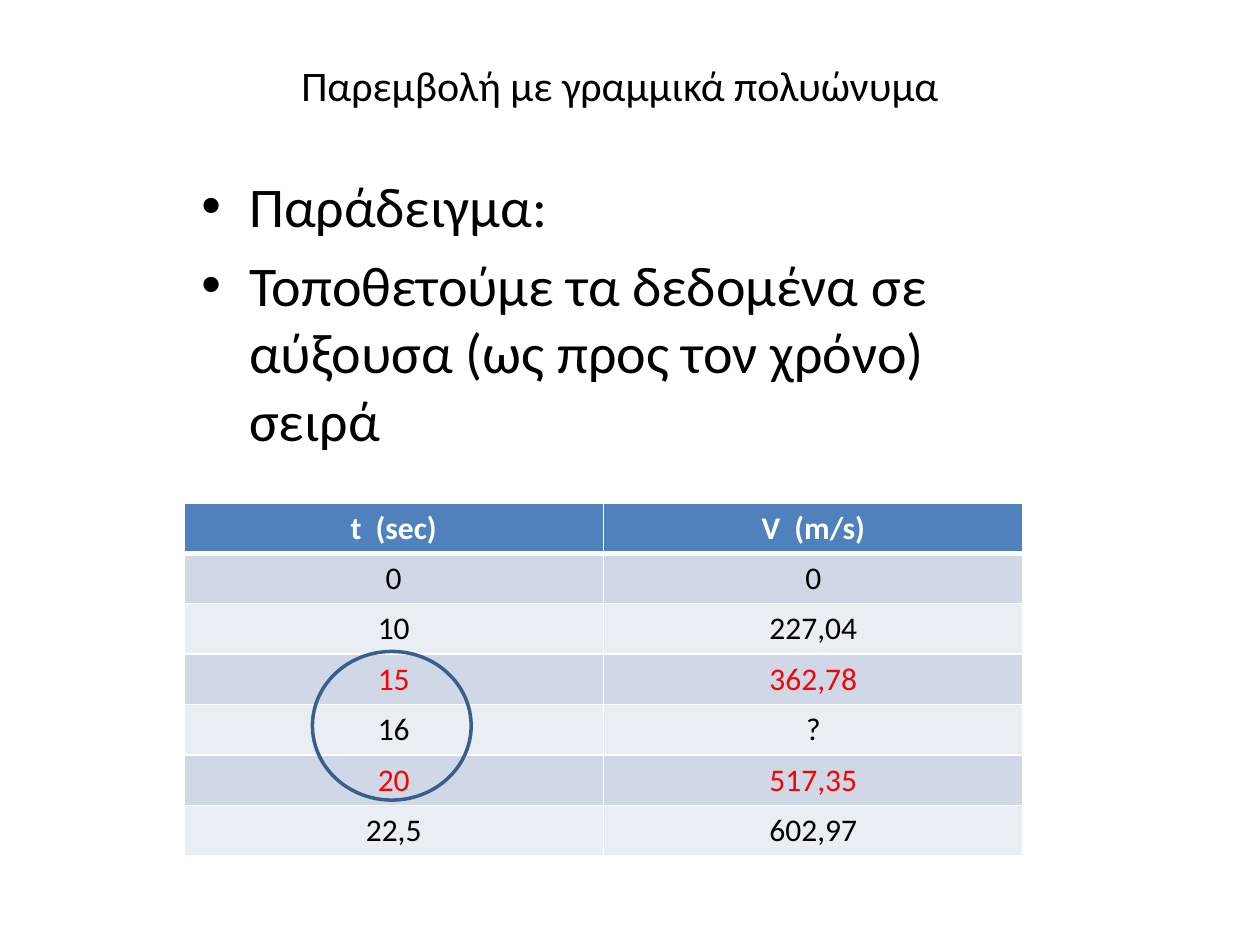
from lxml import etree
from pptx import Presentation
from pptx.dml.color import RGBColor
from pptx.enum.shapes import MSO_SHAPE
from pptx.enum.text import MSO_ANCHOR, PP_ALIGN
from pptx.oxml.ns import qn
from pptx.util import Inches, Pt

ELLIPSE = MSO_SHAPE.OVAL
CENTER, LEFT = PP_ALIGN.CENTER, PP_ALIGN.LEFT
MIDDLE = MSO_ANCHOR.MIDDLE

BLACK = RGBColor(0x00, 0x00, 0x00)
WHITE = RGBColor(0xFF, 0xFF, 0xFF)
RED = RGBColor(0xFF, 0x00, 0x00)
HEADER_BLUE = RGBColor(0x4F, 0x81, 0xBD)
BANDS = (RGBColor(0xD0, 0xD8, 0xE8), RGBColor(0xE9, 0xED, 0xF4))
RING_BLUE = RGBColor(0x3A, 0x5F, 0x8C)

FONT = "Calibri"
TITLE_ONLY = 5
TABLE_LEFT, TABLE_TOP = 1.46, 3.99
COLUMN_WIDTH, ROW_HEIGHT = 3.33, 0.4
TITLE = "Παρεμβολή με γραμμικά πολυώνυμα"
POINTS = (
    "Παράδειγμα:",
    "Τοποθετούμε τα δεδομένα σε αύξουσα (ως προς τον χρόνο) σειρά",
)
MEASUREMENTS = (
    ("t  (sec)", "V  (m/s)"),
    ("0", "0"),
    ("10", "227,04"),
    ("15", "362,78"),
    ("16", "?"),
    ("20", "517,35"),
    ("22,5", "602,97"),
)
NEIGHBOUR_TIMES = ("15", "20")


def write(paragraph, text, size, color=BLACK, bold=False, align=LEFT):
    """Write formatted text into a paragraph."""
    paragraph.alignment = align
    run = paragraph.add_run()
    run.text = text
    run.font.name = FONT
    run.font.size = Pt(size)
    run.font.bold = bold
    run.font.color.rgb = color


def add_bullet(paragraph, indent):
    """Give a paragraph a round bullet and a hanging indent."""
    properties = paragraph._p.get_or_add_pPr()
    properties.set("marL", str(Inches(indent)))
    properties.set("indent", str(-Inches(indent)))
    etree.SubElement(properties, qn("a:buFont"), typeface="Arial")
    etree.SubElement(properties, qn("a:buChar"), char="•")


def set_title(slide):
    """Place and fill the title placeholder."""
    title = slide.shapes.title
    title.left, title.top = Inches(0.67), Inches(0.36)
    title.width, title.height = Inches(8.5), Inches(0.63)
    title.text_frame.vertical_anchor = MIDDLE
    write(title.text_frame.paragraphs[0], TITLE, 24, align=CENTER)


def add_points(slide):
    """Add the bulleted explanation."""
    box = slide.shapes.add_textbox(Inches(1.5), Inches(1.31), Inches(7), Inches(2.44))
    frame = box.text_frame
    frame.word_wrap = True
    for index, point in enumerate(POINTS):
        paragraph = frame.add_paragraph() if index else frame.paragraphs[0]
        paragraph.space_before = Pt(7)
        write(paragraph, point, 32)
        add_bullet(paragraph, 0.38)


def set_borders(cell, top, bottom):
    """Draw white borders, with top and bottom widths in points."""
    properties = cell._tc.get_or_add_tcPr()
    for side, width in (("L", 1), ("R", 1), ("T", top), ("B", bottom)):
        line = etree.SubElement(properties, qn(f"a:ln{side}"), w=str(Pt(width)))
        fill = etree.SubElement(line, qn("a:solidFill"))
        etree.SubElement(fill, qn("a:srgbClr"), val=str(WHITE))


def add_measurements(slide):
    """Add the table of times and speeds."""
    rows, columns = len(MEASUREMENTS), len(MEASUREMENTS[0])
    table = slide.shapes.add_table(
        rows, columns, Inches(TABLE_LEFT), Inches(TABLE_TOP),
        Inches(columns * COLUMN_WIDTH), Inches(rows * ROW_HEIGHT),
    ).table
    for row, values in enumerate(MEASUREMENTS):
        header = row == 0
        background = HEADER_BLUE if header else BANDS[(row - 1) % 2]
        color = WHITE if header else RED if values[0] in NEIGHBOUR_TIMES else BLACK
        for column, value in enumerate(values):
            cell = table.cell(row, column)
            set_borders(cell, top=3 if row == 1 else 1, bottom=3 if header else 1)
            cell.fill.solid()
            cell.fill.fore_color.rgb = background
            write(cell.text_frame.paragraphs[0], value, 18, color, header, CENTER)


def add_ring(slide):
    """Circle the times used for the interpolation."""
    ring = slide.shapes.add_shape(
        ELLIPSE, Inches(2.48), Inches(5.17), Inches(1.26), Inches(1.18))
    ring.shadow.inherit = False
    ring.fill.background()
    ring.line.color.rgb = RING_BLUE
    ring.line.width = Pt(2)


def main():
    """Build and save the slide."""
    deck = Presentation()
    deck.slide_width, deck.slide_height = Inches(10), Inches(7.5)
    slide = deck.slides.add_slide(deck.slide_layouts[TITLE_ONLY])
    set_title(slide)
    add_points(slide)
    add_measurements(slide)
    add_ring(slide)
    deck.save("out.pptx")


if __name__ == "__main__":
    main()
